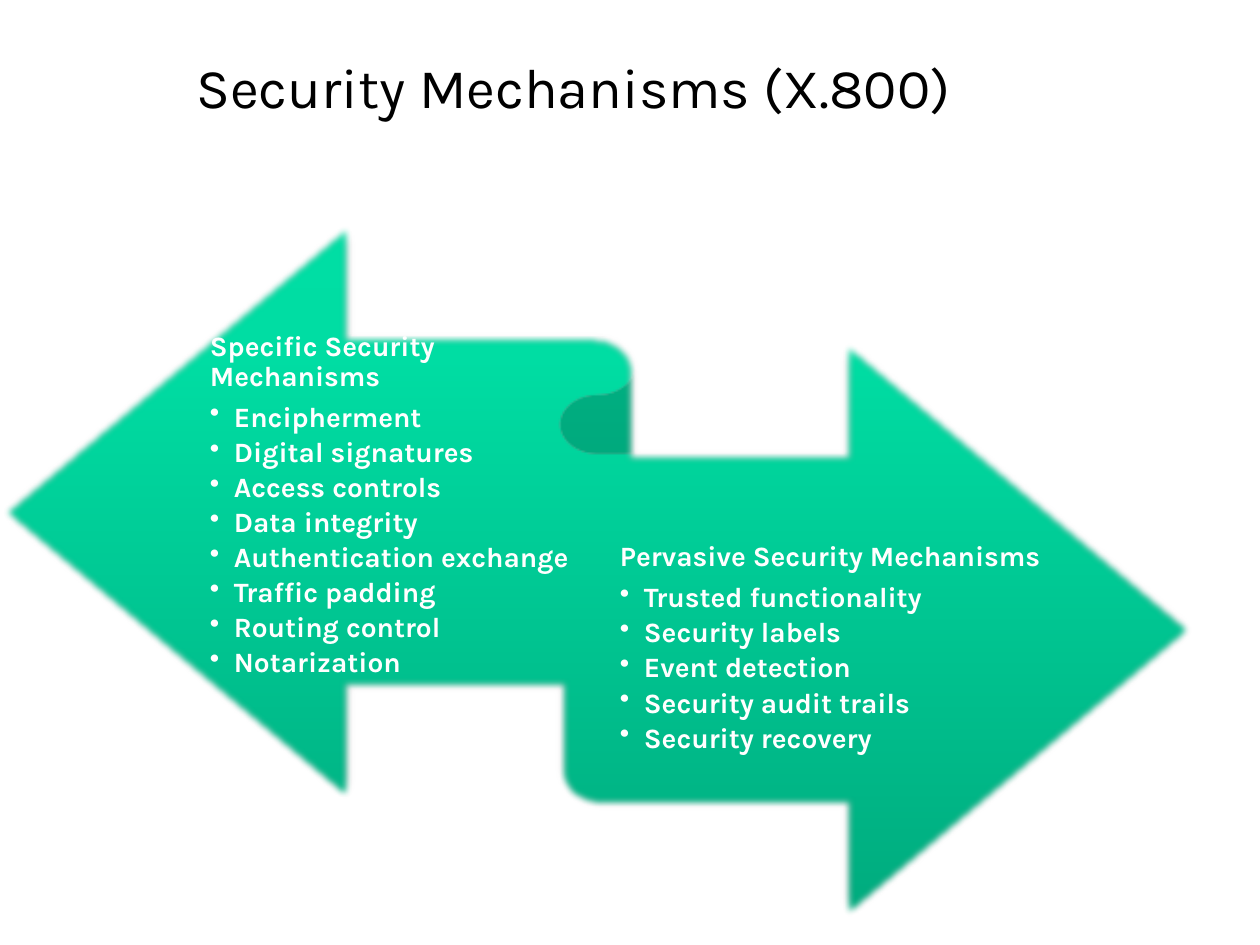
from dataclasses import dataclass

from lxml import etree
from pptx import Presentation
from pptx import util as u
from pptx.dml.color import RGBColor
from pptx.enum import shapes, text
from pptx.oxml import parse_xml
from pptx.oxml.ns import nsdecls, qn

PX_PER_INCH = 126


@dataclass(frozen=True)
class Theme:
    font: str = "Karla"
    title_color: str = "000000"
    body_color: str = "FFFFFF"
    gradient: tuple[tuple[int, str], ...] = (
        (0, "00AA7D"), (80, "00DDA3"), (100, "00DEA4"))
    title_size: int = 32
    body_size: int = 16


@dataclass(frozen=True)
class Box:
    left: int
    top: int
    width: int
    height: int

    def emu(self) -> tuple[u.Emu, ...]:
        return tuple(px(n) for n in (self.left, self.top, self.width, self.height))


@dataclass(frozen=True)
class Category:
    box: Box
    heading: str
    mechanisms: tuple[str, ...]


THEME = Theme()
TITLE_BOX = Box(184, 26, 806, 100)
RIBBON_BOX = Box(0, 220, 1197, 704)
BULLET_INDENT = 24
CATEGORIES = (
    Category(Box(210, 314, 394, 384), "Specific Security Mechanisms", (
        "Encipherment", "Digital signatures", "Access controls",
        "Data integrity", "Authentication exchange", "Traffic padding",
        "Routing control", "Notarization")),
    Category(Box(620, 532, 467, 234), "Pervasive Security Mechanisms", (
        "Trusted functionality", "Security labels", "Event detection",
        "Security audit trails", "Security recovery")),
)


def px(n: int) -> u.Emu:
    return u.Emu(round(n * u.Inches(1) / PX_PER_INCH))


def style(p, size: int, color: str, bold: bool = False) -> None:
    for r in p.runs:
        r.font.name = THEME.font
        r.font.size = u.Pt(size)
        r.font.bold = bold
        r.font.color.rgb = RGBColor.from_string(color)


def add_title(s, wording: str) -> None:
    sp = s.shapes.add_textbox(*TITLE_BOX.emu())
    tf = sp.text_frame
    tf.word_wrap = True
    tf.vertical_anchor = text.MSO_ANCHOR.BOTTOM
    tf.text = wording
    style(tf.paragraphs[0], THEME.title_size, THEME.title_color)


def add_ribbon(group) -> None:
    """Draw the two-way ribbon with an upward gradient and softened edges."""
    sp = group.shapes.add_shape(
        shapes.MSO_SHAPE.LEFT_RIGHT_RIBBON, *RIBBON_BOX.emu())
    sp.line.fill.background()
    stops = "".join(
        f'<a:gs pos="{pos * 1000}"><a:srgbClr val="{color}"/></a:gs>'
        for pos, color in THEME.gradient)
    fill = parse_xml(
        f'<a:gradFill {nsdecls("a")} rotWithShape="1"><a:gsLst>{stops}</a:gsLst>'
        '<a:lin ang="16200000" scaled="0"/></a:gradFill>')
    effects = parse_xml(
        f'<a:effectLst {nsdecls("a")}>'
        '<a:outerShdw blurRad="40000" dist="0" dir="5400000" rotWithShape="0">'
        '<a:srgbClr val="000000"><a:alpha val="35000"/></a:srgbClr></a:outerShdw>'
        '<a:softEdge rad="50800"/></a:effectLst>')
    props = sp._element.spPr
    props.find(qn("a:prstGeom")).addnext(fill)
    props.append(effects)


def add_bullet(p) -> None:
    props = p._p.get_or_add_pPr()
    props.set("marL", str(px(BULLET_INDENT)))
    props.set("indent", str(-px(BULLET_INDENT)))
    etree.SubElement(props, qn("a:buChar")).set("char", "•")


def add_category(group, category: Category) -> None:
    sp = group.shapes.add_textbox(*category.box.emu())
    tf = sp.text_frame
    tf.word_wrap = True
    tf.vertical_anchor = text.MSO_ANCHOR.MIDDLE
    tf.margin_left = tf.margin_right = 0
    tf.margin_top, tf.margin_bottom = px(8), px(9)
    tf.text = "\n".join((category.heading, *category.mechanisms))
    for i, p in enumerate(tf.paragraphs):
        if i:
            add_bullet(p)
        p.line_spacing = 0.9
        p.space_after = u.Pt(2.8 if i else 6)
        style(p, THEME.body_size, THEME.body_color, bold=True)


def main() -> None:
    prs = Presentation()
    prs.slide_width, prs.slide_height = px(1260), px(945)
    s = prs.slides.add_slide(prs.slide_layouts[6])
    add_title(s, "Security Mechanisms (X.800)")
    group = s.shapes.add_group_shape()
    add_ribbon(group)
    for category in CATEGORIES:
        add_category(group, category)
    prs.save("out.pptx")


if __name__ == "__main__":
    main()
